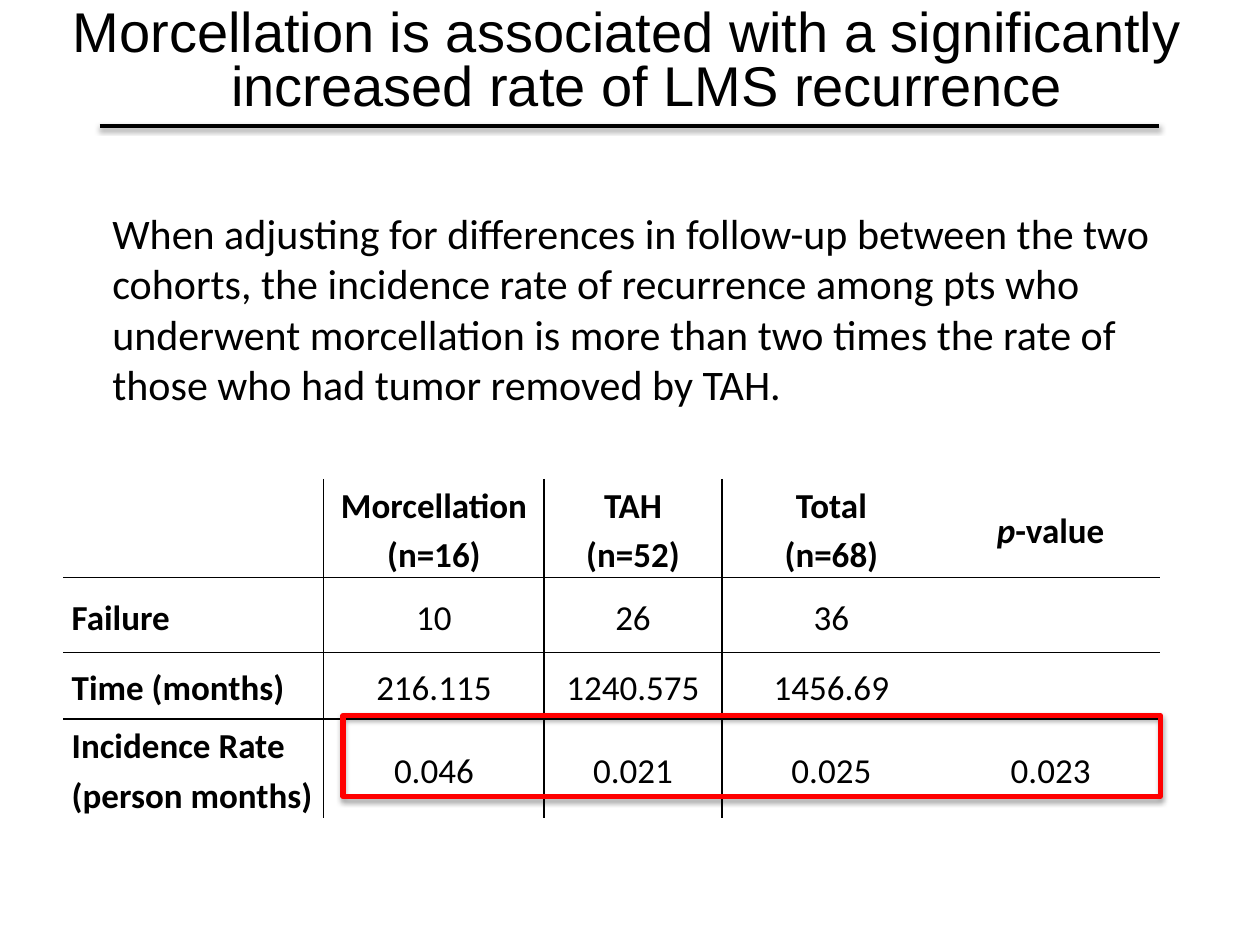
import lxml.etree
import pptx
import pptx.dml.color
import pptx.enum.shapes
import pptx.enum.text
import pptx.oxml.ns
import pptx.util

Pt = pptx.util.Pt
Align = pptx.enum.text.PP_ALIGN
Anchor = pptx.enum.text.MSO_ANCHOR
qn = pptx.oxml.ns.qn

COLORS = {"ink": "000000", "mark": "FF0000"}
PLAIN_STYLE = "{2D5ABB26-0587-4C30-8999-92F81FD0307C}"
TITLE = ("Morcellation is associated with a significantly "
         "increased rate of LMS recurrence")
BODY = ("When adjusting for differences in follow-up between the two cohorts, "
        "the incidence rate of recurrence among pts who underwent morcellation "
        "is more than two times the rate of those who had tumor removed by TAH.")
ROWS = [
    ["", "Morcellation\n(n=16)", "TAH\n(n=52)", "Total\n(n=68)", "p-value"],
    ["Failure", "10", "26", "36", ""],
    ["Time (months)", "216.115", "1240.575", "1456.69", ""],
    ["Incidence Rate\n(person months)", "0.046", "0.021", "0.025", "0.023"],
]
WIDTHS = [149, 126, 101.5, 125.3, 125.3]
HEIGHTS = [55, 43, 38, 55]
RULED_COLS = (0, 1)  # columns with a rule on their right
RULED_ROWS = (0, 1)  # rows with a rule below


def color(name):
    return pptx.dml.color.RGBColor.from_string(COLORS[name])


def node(parent, tag, **attrs):
    return lxml.etree.SubElement(parent, qn(tag), attrs)


def style(run, font, size, bold=False):
    run.font.name = font
    run.font.size = Pt(size)
    run.font.bold = bold
    run.font.color.rgb = color("ink")


def place(shape, left, top, width, height):
    shape.left, shape.top = Pt(left), Pt(top)
    shape.width, shape.height = Pt(width), Pt(height)


def shade(shape, alpha, dist):
    """Cast a soft shadow straight down; call after the line is set."""
    effects = node(shape._element.spPr, "a:effectLst")
    outer = node(effects, "a:outerShdw", blurRad=str(Pt(3.1)),
                 dist=str(Pt(dist)), dir="5400000", rotWithShape="0")
    tint = node(outer, "a:srgbClr", val=COLORS["ink"])
    node(tint, "a:alpha", val=str(alpha * 1000))


def fill_holder(holder, text, font, size):
    frame = holder.text_frame
    frame.text = text
    frame.auto_size = pptx.enum.text.MSO_AUTO_SIZE.NONE
    frame.vertical_anchor = Anchor.TOP
    para = frame.paragraphs[0]
    para.space_before = Pt(0)
    style(para.runs[0], font, size)
    return para


def indent(para, left, first):
    props = para._p.get_or_add_pPr()
    props.set("marL", str(Pt(left)))
    props.set("indent", str(Pt(first)))
    return props


def add_title(slide):
    place(slide.shapes.title, 21, 2, 675, 69)
    para = fill_holder(slide.shapes.title, TITLE, "Arial", 32)
    para.alignment = Align.CENTER
    para.line_spacing = 0.8
    indent(para, 22.5, -22.5)


def add_body(slide):
    holder = slide.placeholders[1]
    place(holder, 57, 115, 617, 124)
    para = fill_holder(holder, BODY, "Calibri", 24)
    node(indent(para, 0, 0), "a:buNone")


def add_rule(slide):
    rule = slide.shapes.add_connector(
        pptx.enum.shapes.MSO_CONNECTOR.STRAIGHT, Pt(57), Pt(72), Pt(662.5), Pt(72))
    rule.line.color.rgb = color("ink")
    rule.line.width = Pt(2)
    shade(rule, 38, 1.6)


def add_frame(slide):
    box = slide.shapes.add_shape(
        pptx.enum.shapes.MSO_SHAPE.RECTANGLE, Pt(196), Pt(409), Pt(467), Pt(46))
    box.fill.background()
    box.line.color.rgb = color("mark")
    box.line.width = Pt(3)
    shade(box, 35, 1.8)


def edge(cell, side):
    line = node(cell._tc.get_or_add_tcPr(), "a:ln" + side, w=str(Pt(1)))
    node(node(line, "a:solidFill"), "a:srgbClr", val=COLORS["ink"])


def rule_cell(cell, row, col):
    sides = {"L": col - 1 in RULED_COLS, "R": col in RULED_COLS,
             "T": row - 1 in RULED_ROWS, "B": row in RULED_ROWS}
    for side, ruled in sides.items():
        if ruled:
            edge(cell, side)
    cell.fill.background()


def fill_cell(cell, text, row, col):
    cell.margin_left = cell.margin_right = Pt(5)
    cell.margin_top = cell.margin_bottom = Pt(0)
    cell.vertical_anchor = Anchor.MIDDLE
    cell.text_frame.text = text
    for para in cell.text_frame.paragraphs:
        para.alignment = Align.CENTER if col else Align.LEFT
        para.line_spacing = 1.15
        if text == "p-value":
            para.text = "p"
            para.add_run().text = "-value"
            para.runs[0].font.italic = True
        for run in para.runs:
            style(run, "Calibri", 20, bold=row == 0 or col == 0)


def add_grid(slide):
    table = slide.shapes.add_table(
        len(ROWS), len(WIDTHS), Pt(36), Pt(273.6),
        Pt(sum(WIDTHS)), Pt(sum(HEIGHTS))).table
    table.first_row = table.horz_banding = False
    table._tbl.tblPr.find(qn("a:tableStyleId")).text = PLAIN_STYLE
    for column, width in zip(table.columns, WIDTHS):
        column.width = Pt(width)
    for row, texts in enumerate(ROWS):
        table.rows[row].height = Pt(HEIGHTS[row])
        for col, text in enumerate(texts):
            cell = table.cell(row, col)
            fill_cell(cell, text, row, col)
            rule_cell(cell, row, col)


def main():
    deck = pptx.Presentation()
    deck.slide_width, deck.slide_height = Pt(720), Pt(540)
    slide = deck.slides.add_slide(deck.slide_layouts[1])
    add_title(slide)
    add_body(slide)
    add_rule(slide)
    add_grid(slide)
    add_frame(slide)
    deck.save("out.pptx")


if __name__ == "__main__":
    main()
